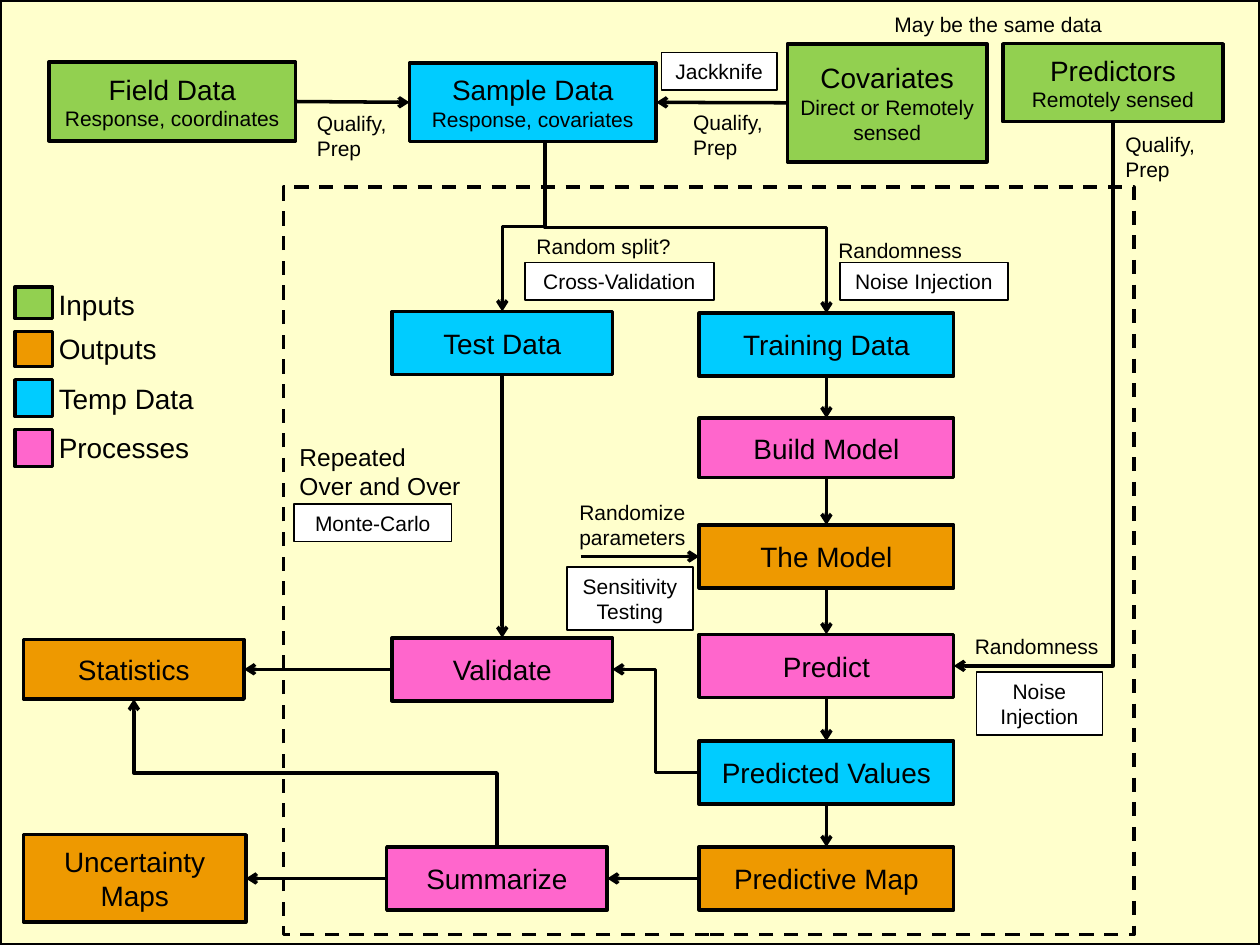
from dataclasses import dataclass

from lxml import etree
from pptx import Presentation
from pptx.dml.color import RGBColor
from pptx.enum import dml, shapes, text
from pptx.oxml import ns
from pptx.util import Pt

TOP, LEFT, BOTTOM, RIGHT = range(4)


@dataclass(frozen=True)
class Theme:
    """Colours, font and type sizes of the flow chart."""

    font: str = "Arial"
    ink: str = "000000"
    paper: str = "FFFFCC"
    note: str = "FFFFFF"
    source: str = "92D050"
    output: str = "EE9900"
    temp: str = "00CCFF"
    process: str = "FF66CC"
    heading: int = 16
    remark: int = 14
    small: int = 12
    stroke: float = 2
    hairline: float = 0.75


class FlowChart:
    """Draws flow chart elements on the current slide in one style."""

    def __init__(self, slide, theme):
        self.slide = slide
        self.theme = theme

    def add_lines(self, shape, lines, align):
        frame = shape.text_frame
        for index, (words, size) in enumerate(lines):
            paragraph = frame.paragraphs[0] if index == 0 else frame.add_paragraph()
            paragraph.alignment = align
            run = paragraph.add_run()
            run.text = words
            run.font.name = self.theme.font
            run.font.size = Pt(size)
            run.font.color.rgb = RGBColor.from_string(self.theme.ink)

    def box(self, bounds, fill=None, lines=(), weight=None):
        shape = self.slide.shapes.add_shape(
            shapes.MSO_SHAPE.RECTANGLE, *(Pt(value) for value in bounds))
        shape.shadow.inherit = False
        if fill:
            shape.fill.solid()
            shape.fill.fore_color.rgb = RGBColor.from_string(fill)
        else:
            shape.fill.background()
        shape.line.color.rgb = RGBColor.from_string(self.theme.ink)
        shape.line.width = Pt(weight or self.theme.stroke)
        shape.text_frame.word_wrap = True
        self.add_lines(shape, lines, text.PP_ALIGN.CENTER)
        return shape

    def step(self, bounds, fill, title, detail=None):
        lines = [(title, self.theme.heading)]
        if detail:
            lines.append((detail, self.theme.small))
        return self.box(bounds, fill, lines)

    def note(self, bounds, *lines):
        self.box(bounds, self.theme.note,
                 [(line, self.theme.small) for line in lines], self.theme.hairline)

    def label(self, bounds, *lines, size=None, wrap=False):
        area = self.slide.shapes.add_textbox(*(Pt(value) for value in bounds))
        area.text_frame.word_wrap = wrap
        area.text_frame.auto_size = text.MSO_AUTO_SIZE.SHAPE_TO_FIT_TEXT
        self.add_lines(area, [(line, size or self.theme.small) for line in lines],
                       text.PP_ALIGN.LEFT)

    def region(self, bounds):
        self.box(bounds).line.dash_style = dml.MSO_LINE.DASH

    def arrow(self, begin, end, kind=shapes.MSO_CONNECTOR.STRAIGHT):
        """Join two ends, each a point or a (box, side) pair."""
        link = self.slide.shapes.add_connector(kind, 0, 0, 0, 0)
        if hasattr(begin[0], "left"):
            link.begin_connect(*begin)
        else:
            link.begin_x, link.begin_y = map(Pt, begin)
        if hasattr(end[0], "left"):
            link.end_connect(*end)
        else:
            link.end_x, link.end_y = map(Pt, end)
        link.line.color.rgb = RGBColor.from_string(self.theme.ink)
        link.line.width = Pt(self.theme.stroke)
        properties = link._element.spPr
        etree.SubElement(properties.find(ns.qn("a:ln")), ns.qn("a:tailEnd"), type="arrow")
        etree.SubElement(properties, ns.qn("a:effectLst"))
        return link

    def upright_elbow(self, begin, end, preset="bentConnector3"):
        """Draw an elbow that leaves its begin point vertically."""
        link = self.arrow(begin, end, shapes.MSO_CONNECTOR.ELBOW)
        across, down = link.end_x - link.begin_x, link.end_y - link.begin_y
        middle_x = (link.begin_x + link.end_x) // 2
        middle_y = (link.begin_y + link.end_y) // 2
        link.width, link.height = abs(down), abs(across)
        link.left, link.top = middle_x - link.width // 2, middle_y - link.height // 2
        frame = link._element.spPr.find(ns.qn("a:xfrm"))
        frame.rot = 90.0 if down > 0 else 270.0
        frame.flipH = False
        frame.flipV = (across > 0) == (down > 0)
        link._element.spPr.find(ns.qn("a:prstGeom")).set("prst", preset)


def main():
    """Build the modelling workflow slide."""
    deck = Presentation()
    deck.slide_width, deck.slide_height = Pt(720), Pt(540)
    theme = Theme()
    chart = FlowChart(deck.slides.add_slide(deck.slide_layouts[6]), theme)
    chart.box((0, 0, 720, 540), theme.paper)
    chart.region((162, 107, 486, 427))

    field = chart.step((28, 35.5, 141, 45), theme.source, "Field Data", "Response, coordinates")
    sample = chart.step((234, 36, 141, 45), theme.temp, "Sample Data", "Response, covariates")
    covariates = chart.step((450, 25, 114, 67.5), theme.source,
                            "Covariates", "Direct or Remotely sensed")
    predictors = chart.step((573, 25, 126, 44.5), theme.source, "Predictors", "Remotely sensed")

    pipeline = [
        chart.step((399.5, top, 145.5, height), fill, title)
        for top, height, fill, title in (
            (179, 36, theme.temp, "Training Data"),
            (239, 34, theme.process, "Build Model"),
            (300, 36, theme.output, "The Model"),
            (362.5, 36, theme.process, "Predict"),
            (423.5, 36, theme.temp, "Predicted Values"),
            (484, 36, theme.output, "Predictive Map"),
        )
    ]
    training, build, model, predict, values, predictive_map = pipeline
    test = chart.step((224, 178, 126, 36), theme.temp, "Test Data")
    validate = chart.step((224, 364.5, 126, 36), theme.process, "Validate")
    summarize = chart.step((221, 484, 126, 36), theme.process, "Summarize")
    statistics = chart.step((13.5, 365.5, 126, 34), theme.output, "Statistics")
    uncertainty = chart.step((13.5, 477, 127, 50), theme.output, "Uncertainty Maps")

    for upper, lower in [*zip(pipeline, pipeline[1:]), (test, validate)]:
        chart.arrow((upper, BOTTOM), (lower, TOP))
    for origin, target in ((covariates, sample), (validate, statistics),
                           (predictive_map, summarize), (summarize, uncertainty)):
        chart.arrow((origin, LEFT), (target, RIGHT))
    chart.arrow((field, RIGHT), (sample, LEFT))
    chart.arrow((332, 318), (model, LEFT))
    chart.arrow((values, LEFT), (validate, RIGHT), shapes.MSO_CONNECTOR.ELBOW)
    split = (311.5, 81)
    chart.upright_elbow(split, (472.25, 179))
    chart.upright_elbow(split, (287, 178))
    chart.upright_elbow((summarize, TOP), (statistics, BOTTOM))
    chart.upright_elbow((predictors, BOTTOM), (predict, RIGHT), "bentConnector2")

    for left, top in ((389, 59), (174, 59.5), (636, 71.5)):
        chart.label((left, top, 58, 36), "Qualify,", "Prep")
    for left, top in ((550, 358.5), (472, 132.5)):
        chart.label((left, top, 86, 21.5), "Randomness")
    chart.label((299.5, 130, 91.5, 21.5), "Random split?")
    chart.label((504, 3, 134, 21.5), "May be the same data")
    chart.label((324, 282, 78, 36), "Randomize parameters", wrap=True)
    chart.label((164, 249, 107, 41), "Repeated", "Over and Over", size=theme.remark)

    chart.note((324, 324, 72, 36), "Sensitivity", "Testing")
    chart.note((300, 150, 108, 21.5), "Cross-Validation")
    chart.note((378, 30, 66, 21.5), "Jackknife")
    chart.note((168, 288, 90, 21.5), "Monte-Carlo")
    chart.note((480, 150, 96, 21.5), "Noise Injection")
    chart.note((558, 384, 72, 36), "Noise", "Injection")

    for top, height, name_top, width, fill, name in (
        (164, 18, 160.5, 58, theme.source, "Inputs"),
        (189.5, 20, 186, 71, theme.output, "Outputs"),
        (217, 21, 214.5, 93, theme.temp, "Temp Data"),
        (245.5, 21, 242.5, 90, theme.process, "Processes"),
    ):
        chart.box((8.5, top, 21.5, height), fill)
        chart.label((26.5, name_top, width, 26.5), name, size=theme.heading)

    deck.save("out.pptx")


if __name__ == "__main__":
    main()
